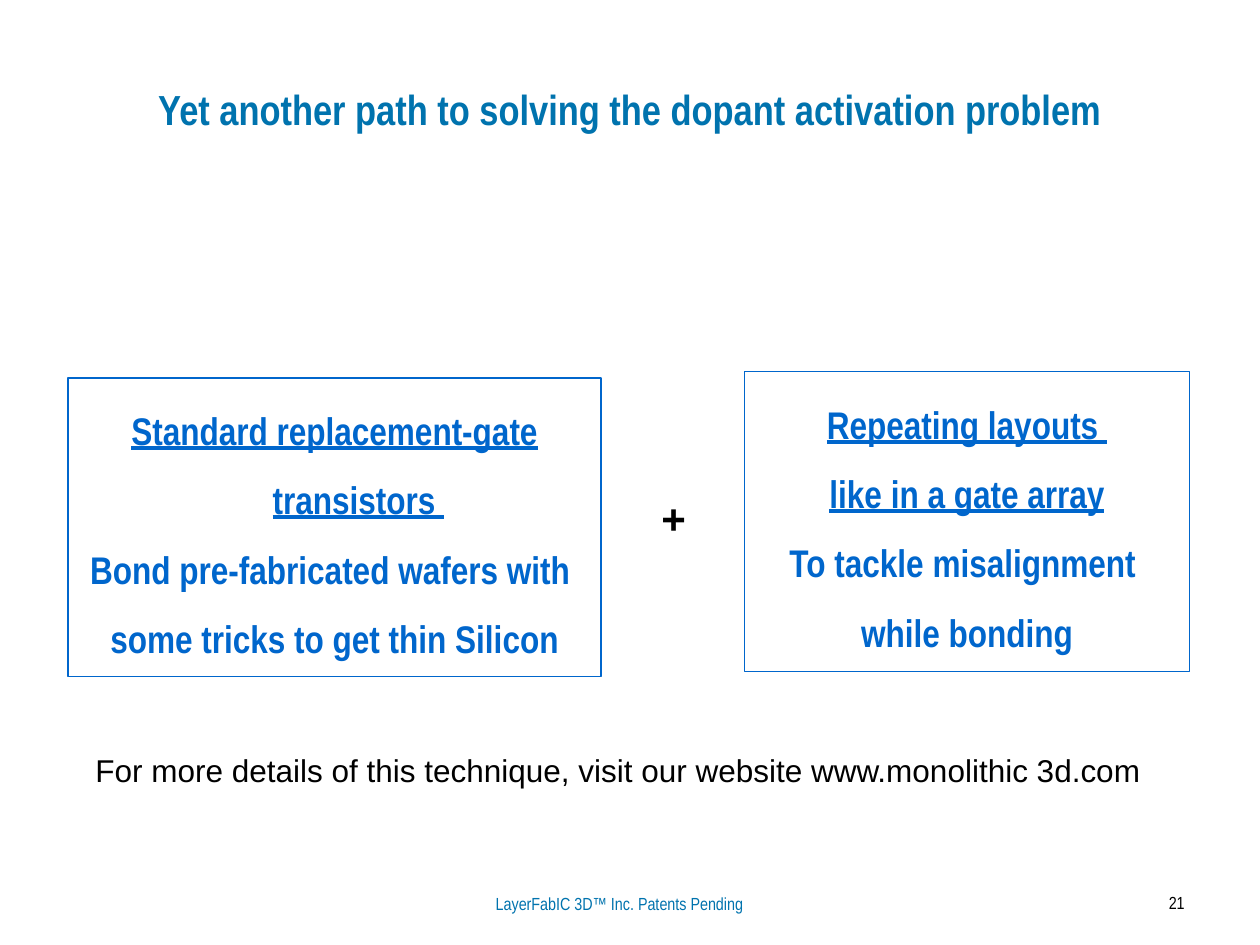
from pptx import Presentation
from pptx.dml.color import RGBColor
from pptx.enum.shapes import MSO_SHAPE as Shape
from pptx.enum.text import MSO_ANCHOR as Anchor, PP_ALIGN as Align
from pptx.util import Inches, Pt

TEAL = RGBColor(0x00, 0x73, 0xAE)
BLUE = RGBColor(0x00, 0x66, 0xCC)
BLACK = RGBColor(0x00, 0x00, 0x00)
NARROW, WIDE = "Arial Narrow", "Arial"
HANGING = 0.38

LABELS = [
    ("Yet another path to solving the dopant activation problem",
     (0.5, 0.24, 9, 1.25), NARROW, 24, TEAL, True, Align.CENTER, Anchor.MIDDLE),
    ("LayerFabIC 3D™ Inc. Patents Pending",
     (3.33, 7.04, 3.17, 0.26), NARROW, 10, TEAL, False, Align.CENTER, Anchor.TOP),
    ("21", (8.39, 7.03, 1.11, 0.33), NARROW, 10, BLACK, False, Align.RIGHT, Anchor.TOP),
    ("+", (5.15, 3.86, 1.29, 0.5), WIDE, 24, BLACK, True, Align.LEFT, Anchor.TOP),
    ("For more details of this technique, visit our website www.monolithic 3d.com",
     (0.66, 5.91, 8.77, 0.4), WIDE, 18, BLACK, False, Align.LEFT, Anchor.TOP),
]

TECHNIQUES = [
    ((0.54, 3, 4.23, 2.37),
     ["Standard replacement-gate transistors "],
     ["Bond pre-fabricated wafers with ", "some tricks to get thin Silicon"]),
    ((5.91, 2.95, 3.53, 2.38),
     ["Repeating layouts ", "like in a gate array"],
     ["To tackle misalignment ", "while bonding"]),
]


def add_span(para, text, font, size, color, bold, underline=False):
    span = para.add_run()
    span.text = text
    span.font.name = font
    span.font.size = Pt(size)
    span.font.color.rgb = color
    span.font.bold = bold
    span.font.underline = underline


def add_label(page, text, place, font, size, color, bold, align, anchor):
    frame = page.shapes.add_textbox(*map(Inches, place)).text_frame
    frame.word_wrap = True
    frame.vertical_anchor = anchor
    para = frame.paragraphs[0]
    para.alignment = align
    add_span(para, text, font, size, color, bold)


def add_technique(page, place, headings, details):
    box = page.shapes.add_shape(Shape.RECTANGLE, *map(Inches, place))
    box.shadow.inherit = False
    box.fill.background()
    box.line.color.rgb = BLUE
    box.line.width = Pt(0.75)
    frame = box.text_frame
    frame.word_wrap = True
    frame.vertical_anchor = Anchor.TOP
    for index, text in enumerate(headings + details):
        para = frame.add_paragraph() if index else frame.paragraphs[0]
        para.alignment = Align.CENTER
        para.line_spacing = 1.5
        properties = para._p.get_or_add_pPr()
        properties.set("marL", str(Inches(HANGING)))
        properties.set("indent", str(-Inches(HANGING)))
        add_span(para, text, NARROW, 22, BLUE, True, index < len(headings))


def main():
    deck = Presentation()
    deck.slide_width, deck.slide_height = Inches(10), Inches(7.5)
    page = deck.slides.add_slide(deck.slide_layouts[6])
    for technique in TECHNIQUES:
        add_technique(page, *technique)
    for label in LABELS:
        add_label(page, *label)
    deck.save("out.pptx")


if __name__ == "__main__":
    main()
